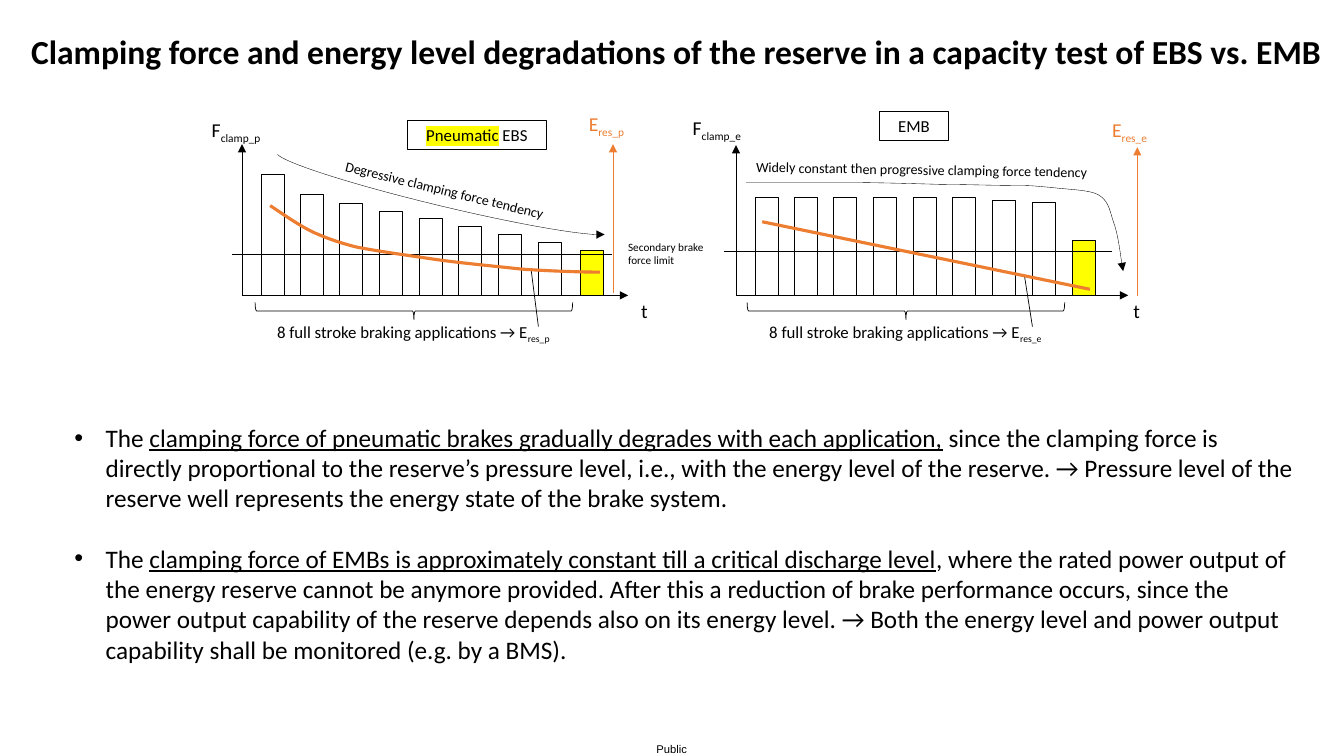
"""Build the slide on clamping force degradation of EBS and EMB brakes."""
from dataclasses import dataclass
from typing import NamedTuple

from lxml.etree import SubElement
from pptx import Presentation
from pptx.dml.color import RGBColor
from pptx.enum.shapes import MSO_CONNECTOR, MSO_SHAPE
from pptx.enum.text import MSO_ANCHOR, PP_ALIGN
from pptx.oxml.ns import qn
from pptx.util import Emu, Pt

PX = 9144
BLACK = RGBColor(0, 0, 0)
WHITE = RGBColor(0xFF, 0xFF, 0xFF)
YELLOW = RGBColor(0xFF, 0xFF, 0)
ORANGE = RGBColor(0xED, 0x7D, 0x31)
BASE, BAR_W, BAR_SPAN = 293, 23, 275
SMALL_INSETS = (8, 4, 8, 4)

Box = tuple[int, int, int, int]
Point = tuple[int, int]


class Run(NamedTuple):
    """Piece of text with its emphasis: sub, underline or highlight."""
    text: str
    mark: str = ""


@dataclass
class Label:
    """Text box with one paragraph."""
    box: Box
    runs: list[Run]
    size: int
    color: RGBColor = BLACK
    bold: bool = False
    font: str = "Calibri"
    align: PP_ALIGN = PP_ALIGN.LEFT
    insets: Box = SMALL_INSETS
    rotation: float = 0
    wrap: bool = True


@dataclass
class Panel:
    """One force diagram with its axes, bars and labels."""
    name: list[Run]
    name_box: Box
    suffix: str
    axis_x: int
    axis_top: int
    axis_end: int
    force_box: Box
    energy_x: int
    energy_y: tuple[int, int]
    energy_at: Point
    t_x: int
    bar_x: int
    tops: list[int]
    last_bar: Point
    limit: tuple[int, int, int]
    brace_x: int
    caption_x: int
    pointer: tuple[Point, Point]


PANELS = [
    Panel([Run("Pneumatic", "highlight"), Run(" EBS")], (404, 120, 138, 28), "p",
          240, 143, 623, (202, 113, 79, 32), 608, (291, 143), (576, 107), 628, 259,
          [173, 193, 202, 210, 217, 225, 233, 241], (576, 249), (230, 607, 252),
          402, 244, ((527, 269), (534, 324))),
    Panel([Run("EMB")], (872, 111, 69, 28), "e",
          730, 144, 1119, (679, 111, 85, 32), 1128, (294, 146), (1095, 113), 1116, 749,
          [196, 196, 196, 196, 196, 196, 199, 201], (1064, 239), (718, 1103, 249),
          890, 732, ((1016, 273), (1024, 324))),
]
EBS_ENERGY = [(268, 204), (283, 214), (297, 224), (312, 231), (326, 237), (334, 240),
              (353, 245), (373, 249), (402, 253), (429, 257), (456, 261), (490, 264),
              (517, 267), (545, 269), (577, 270), (595, 270)]
EMB_TENDENCY = [(838, 181), (871, 181), (934, 183), (934, 183), (959, 183), (983, 184),
                (1008, 184), (1026, 184), (1029, 185), (1043, 186), (1057, 188),
                (1079, 188), (1089, 193), (1099, 199), (1100, 206), (1104, 219),
                (1109, 232), (1112, 259), (1114, 269)]
LABELS = [
    Label((21, 26, 1312, 50), [Run("Clamping force and energy level degradations of the "
          "reserve in a capacity test of EBS vs. EMB")], 24, bold=True,
          insets=(10, 5, 10, 5), wrap=False),
    Label((651, 736, 34, 13), [Run("Public")], 8, font="Arial", insets=(0, 0, 0, 0), wrap=False),
    Label((615, 234, 103, 35), [Run("Secondary brake force limit")], 8),
    Label((275, 176, 332, 25), [Run("Degressive clamping force tendency")], 10,
          align=PP_ALIGN.CENTER, rotation=13.7),
    Label((739, 156, 350, 25), [Run("Widely constant then progressive clamping force tendency")],
          10, align=PP_ALIGN.CENTER, rotation=1),
]
BODY = [
    [Run("The "), Run("clamping force of pneumatic brakes gradually degrades with each "
                      "application,", "underline"),
     Run(" since the clamping force is directly proportional to the reserve’s pressure level, "
         "i.e., with the energy level of the reserve. → Pressure level of the reserve well "
         "represents the energy state of the brake system.")],
    [Run("The "), Run("clamping force of EMBs is approximately constant till a critical "
                      "discharge level", "underline"),
     Run(", where the rated power output of the energy reserve cannot be anymore provided. "
         "After this a reduction of brake performance occurs, since the power output capability "
         "of the reserve depends also on its energy level. → Both the energy level and power "
         "output capability shall be monitored (e.g. by a BMS).")],
]


def emu(*values: int) -> list[Emu]:
    """Scale px to EMU."""
    return [Emu(v * PX) for v in values]


def assign(obj, values: dict) -> None:
    """Set attributes from a dict."""
    for key, value in values.items():
        setattr(obj, key, value)


def outline(sp, color: RGBColor, width: float, arrow: str = "") -> None:
    """Style a line, with an optional headEnd or tailEnd arrow."""
    sp.line.color.rgb = color
    sp.line.width = Pt(width)
    if arrow:
        SubElement(sp.line._get_or_add_ln(), qn(f"a:{arrow}"), type="triangle")


def add_runs(p, runs: list[Run], size: int, color: RGBColor = BLACK,
             font: str = "Calibri", bold: bool = False) -> None:
    """Append formatted runs to a paragraph."""
    for text, mark in runs:
        r = p.add_run()
        r.text = text
        r.font.color.rgb = color
        assign(r.font, {"size": Pt(size), "name": font, "bold": bold,
                        "underline": mark == "underline"})
        rpr = r._r.get_or_add_rPr()
        if mark == "sub":
            rpr.set("baseline", "-25000")
        if mark == "highlight":
            hl = SubElement(rpr, qn("a:highlight"))
            SubElement(hl, qn("a:srgbClr"), val=str(YELLOW))
            rpr.find(qn("a:latin")).addprevious(hl)


def frame(sp, insets: Box, wrap: bool = True):
    """Set the insets and wrapping of a shape's text frame."""
    tf = sp.text_frame
    sides = ("margin_left", "margin_top", "margin_right", "margin_bottom")
    assign(tf, dict(zip(sides, emu(*insets)), word_wrap=wrap))
    return tf


def add_label(s, label: Label) -> None:
    """Draw a label."""
    sp = s.shapes.add_textbox(*emu(*label.box))
    sp.rotation = label.rotation
    p = frame(sp, label.insets, label.wrap).paragraphs[0]
    p.alignment = label.align
    add_runs(p, label.runs, label.size, label.color, label.font, label.bold)


def add_preset(s, kind: MSO_SHAPE, box: Box, fill: RGBColor | None = None,
               width: float = 0.75, arrow: str = "", rotation: float = 0):
    """Draw a black-lined preset shape."""
    sp = s.shapes.add_shape(kind, *emu(*box))
    sp.shadow.inherit = False
    sp.rotation = rotation
    if fill is None:
        sp.fill.background()
    else:
        sp.fill.solid()
        sp.fill.fore_color.rgb = fill
    outline(sp, BLACK, width, arrow)
    return sp


def add_line(s, start: Point, end: Point, width: float = 0.5,
             color: RGBColor = BLACK, arrow: str = "") -> None:
    """Draw a straight line."""
    sp = s.shapes.add_connector(MSO_CONNECTOR.STRAIGHT, *emu(*start, *end))
    outline(sp, color, width, arrow)
    SubElement(sp._element.spPr, qn("a:effectLst"))


def add_curve(s, knots: list[Point], color: RGBColor, width: float,
              arrow: str = "", lead: tuple[Point, ...] = ()) -> None:
    """Draw chained cubic Bezier curves after optional straight lead points."""
    points = [*lead, *knots]
    fb = s.shapes.build_freeform(*points[0], scale=PX)
    fb.add_line_segments(points[1:], close=False)
    sp = fb.convert_to_shape()
    segments = list(sp._element.iter(qn("a:lnTo")))[len(lead):]
    for k in range(0, len(segments), 3):
        curve = segments[k]
        curve.tag = qn("a:cubicBezTo")
        for handle in segments[k + 1:k + 3]:
            curve.append(handle[0])
            handle.getparent().remove(handle)
    sp.shadow.inherit = False
    sp.fill.background()
    outline(sp, color, width, arrow)


def add_panel(s, d: Panel) -> None:
    """Draw one force diagram."""
    x, y = d.last_bar
    add_preset(s, MSO_SHAPE.RECTANGLE, (x, y, BAR_W, BASE - y), YELLOW)
    origin = (d.axis_x, BASE)
    for end in ((d.axis_x, d.axis_top), (d.axis_end, BASE)):
        add_line(s, origin, end, arrow="tailEnd")
    for i, top in enumerate(d.tops):
        left = d.bar_x + i * BAR_SPAN // (len(d.tops) - 1)
        add_preset(s, MSO_SHAPE.RECTANGLE, (left, top, BAR_W, BASE - top), WHITE)
    left, right, level = d.limit
    add_line(s, (left, level), (right, level), 0.25)
    add_preset(s, MSO_SHAPE.RIGHT_BRACE, (d.brace_x, 151, 17, 315), width=0.5, rotation=90)
    add_line(s, *d.pointer)
    bottom, top = d.energy_y
    add_line(s, (d.energy_x, bottom), (d.energy_x, top), color=ORANGE, arrow="tailEnd")
    sp = add_preset(s, MSO_SHAPE.RECTANGLE, d.name_box)
    tf = frame(sp, SMALL_INSETS)
    tf.vertical_anchor = MSO_ANCHOR.MIDDLE
    tf.paragraphs[0].alignment = PP_ALIGN.CENTER
    add_runs(tf.paragraphs[0], d.name, 12)
    energy = Run(f"res_{d.suffix}", "sub")
    for label in (
        Label((d.t_x, 293, 22, 32), [Run("t")], 14),
        Label(d.force_box, [Run("F"), Run(f"clamp_{d.suffix}", "sub")], 14),
        Label((*d.energy_at, 79, 32), [Run("E"), energy], 14, ORANGE),
        Label((d.caption_x, 315, 332, 28), [Run("8 full stroke braking applications → E"), energy],
              12, align=PP_ALIGN.CENTER),
    ):
        add_label(s, label)


def add_body(s) -> None:
    """Draw the bulleted statements."""
    tf = frame(s.shapes.add_textbox(*emu(64, 414, 1231, 252)), (10, 5, 10, 5))
    for i, runs in enumerate(BODY):
        p = tf.add_paragraph() if i else tf.paragraphs[0]
        ppr = p._p.get_or_add_pPr()
        indent = emu(31)[0]
        ppr.set("marL", str(indent))
        ppr.set("indent", str(-indent))
        SubElement(ppr, qn("a:buFont"), typeface="Arial")
        SubElement(ppr, qn("a:buChar"), char="•")
        if i:
            p.space_before = Pt(21.5)
        add_runs(p, runs, 18)


def main() -> None:
    """Build and save the slide."""
    prs = Presentation()
    prs.slide_width, prs.slide_height = emu(1333, 750)
    s = prs.slides.add_slide(prs.slide_layouts[6])
    for panel in PANELS:
        add_panel(s, panel)
    for label in LABELS:
        add_label(s, label)
    arc = add_preset(s, MSO_SHAPE.ARC, (426, 21, 27, 340), None, 0.25, "headEnd", 103.5)
    arc.adjustments[0], arc.adjustments[1] = 162.645, 53.664
    add_curve(s, EMB_TENDENCY, BLACK, 0.25, "tailEnd", ((740, 181),))
    add_curve(s, EBS_ENERGY, ORANGE, 2.25)
    add_line(s, (756, 220), (1081, 287), 2.25, ORANGE)
    add_body(s)
    prs.save("out.pptx")


if __name__ == "__main__":
    main()
